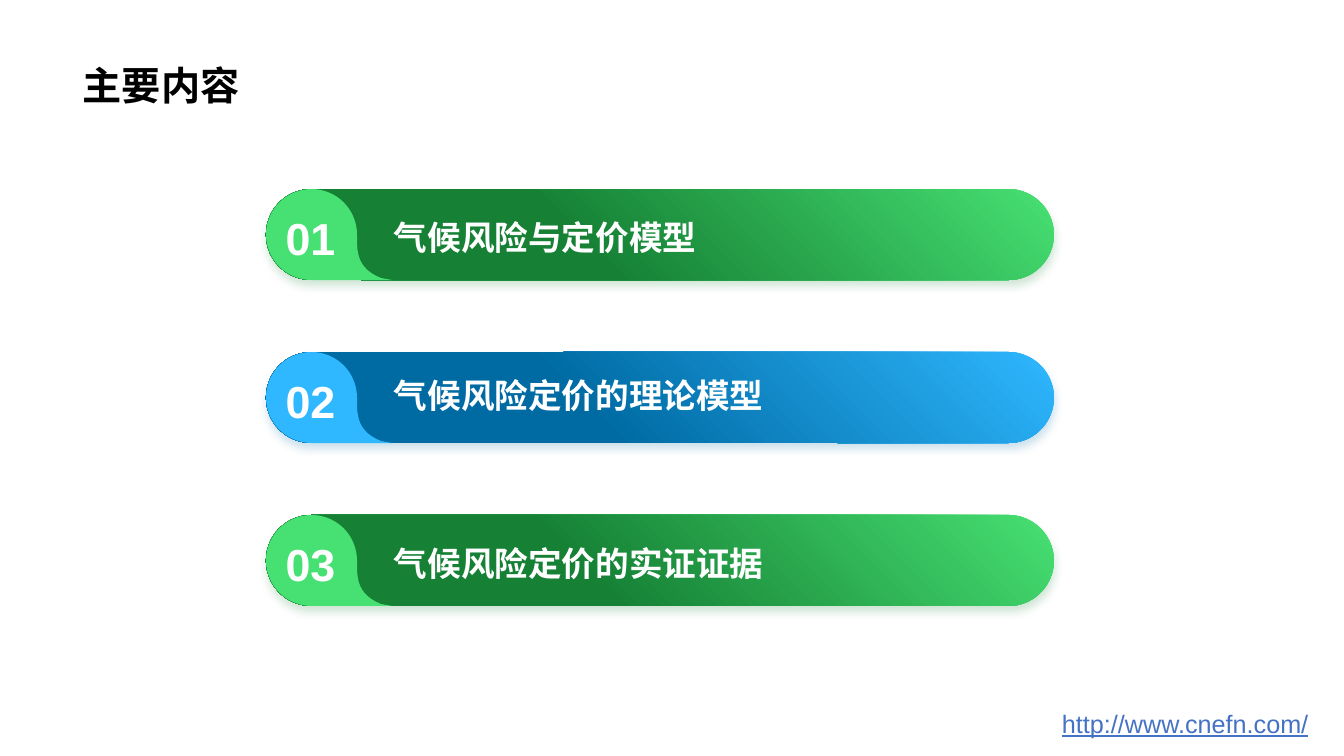
from math import cos, radians, sin

from lxml.etree import SubElement
from pptx import Presentation
from pptx.dml.color import RGBColor
from pptx.enum.shapes import MSO_SHAPE
from pptx.enum.text import MSO_ANCHOR, PP_ALIGN
from pptx.oxml.ns import qn
from pptx.util import Emu, Pt

PX = 914400 / 100.8
WHITE = RGBColor(0xFF, 0xFF, 0xFF)
BLACK = RGBColor(0x00, 0x00, 0x00)
LINK_BLUE = RGBColor(0x44, 0x72, 0xC4)
LIGHT_GREEN = RGBColor(0x47, 0xE0, 0x73)
DARK_GREEN = RGBColor(0x16, 0x81, 0x35)
LIGHT_BLUE = RGBColor(0x2F, 0xB7, 0xFF)
DARK_BLUE = RGBColor(0x00, 0x6B, 0xA3)

BAR_LEFT, BAR_TOP, BAR_WIDTH, BAR_HEIGHT, BAR_PITCH = 266, 189, 788, 91, 163
CHAPTERS = [
    ("气候风险与定价模型", 23, LIGHT_GREEN, DARK_GREEN),
    ("气候风险定价的理论模型", 18, LIGHT_BLUE, DARK_BLUE),
    ("气候风险定价的实证证据", 23, LIGHT_GREEN, DARK_GREEN),
]

deck = Presentation()
deck.slide_width, deck.slide_height = Emu(round(1344 * PX)), Emu(round(756 * PX))
page = deck.slides.add_slide(deck.slide_layouts[6])


def px(*lengths):
    return [Emu(round(length * PX)) for length in lengths]


def add_text(text, left, top, width, height, size, color, bold=True, wrap=True):
    box = page.shapes.add_textbox(*px(left, top, width, height))
    box.text_frame.word_wrap = wrap
    para = box.text_frame.paragraphs[0]
    para.text = text
    font = para.runs[0].font
    font.name, font.size, font.bold = "Arial", Pt(size), bold
    font.color.rgb = color
    return box


# Title and web address
title = add_text("主要内容", 73, 0, 1198, 113, 28, BLACK)
title.text_frame.vertical_anchor = MSO_ANCHOR.BOTTOM
address = add_text("http://www.cnefn.com/", 1052, 703, 276, 40, 18, LINK_BLUE, bold=False)
address.text_frame.paragraphs[0].runs[0].font.underline = True

# Number tab outline: three quarters of a circle, then a curve flaring to the right
radius = BAR_HEIGHT / 2
tab_outline = [
    (radius + radius * cos(radians(angle)), radius + radius * sin(radians(angle)))
    for angle in range(90, 361, 5)
]
flare = [(91, 50), (91, 64), (92, 80), (115, 89)]
for step in range(13):
    t = step / 12
    weights = ((1 - t) ** 3, 3 * t * (1 - t) ** 2, 3 * t**2 * (1 - t), t**3)
    tab_outline.append(tuple(
        sum(weight * point[axis] for weight, point in zip(weights, flare))
        for axis in (0, 1)
    ))
tab_outline.append((126, BAR_HEIGHT))

# Chapter bars
for row, (chapter, text_offset, light, dark) in enumerate(CHAPTERS):
    top = BAR_TOP + row * BAR_PITCH

    bar = page.shapes.add_shape(
        MSO_SHAPE.ROUNDED_RECTANGLE, *px(BAR_LEFT, top, BAR_WIDTH, BAR_HEIGHT))
    bar.adjustments[0] = 0.5
    bar.line.fill.background()
    bar.fill.gradient()
    bar.fill.gradient_angle = 315
    for stop, color, position in zip(bar.fill.gradient_stops, (light, dark), (0, 0.6)):
        stop.color.rgb = color
        stop.position = position
    properties = bar._element.spPr
    properties.find(qn("a:xfrm")).set("flipH", "1")

    # Soft shadow below the bar
    bar.shadow.inherit = False
    shadow = SubElement(
        properties.find(qn("a:effectLst")), qn("a:outerShdw"),
        blurRad=str(Pt(6)), dist=str(Pt(4)), dir="5400000", algn="t", rotWithShape="0")
    shadow_color = SubElement(shadow, qn("a:srgbClr"), val=str(dark))
    SubElement(shadow_color, qn("a:alpha"), val="20000")

    points = [px(BAR_LEFT + x, top + y) for x, y in tab_outline]
    builder = page.shapes.build_freeform(*points[0], scale=1.0)
    builder.add_line_segments(points[1:], close=True)
    tab = builder.convert_to_shape()
    tab.shadow.inherit = False
    tab.fill.solid()
    tab.fill.fore_color.rgb = light
    tab.line.fill.background()

    add_text(chapter, 384, top + text_offset, 582, 50, 24, WHITE)
    number = add_text(f"{row + 1:02d}", 275, top + 17, 71, 65, 32, WHITE, wrap=False)
    number.text_frame.paragraphs[0].alignment = PP_ALIGN.CENTER

deck.save("out.pptx")
